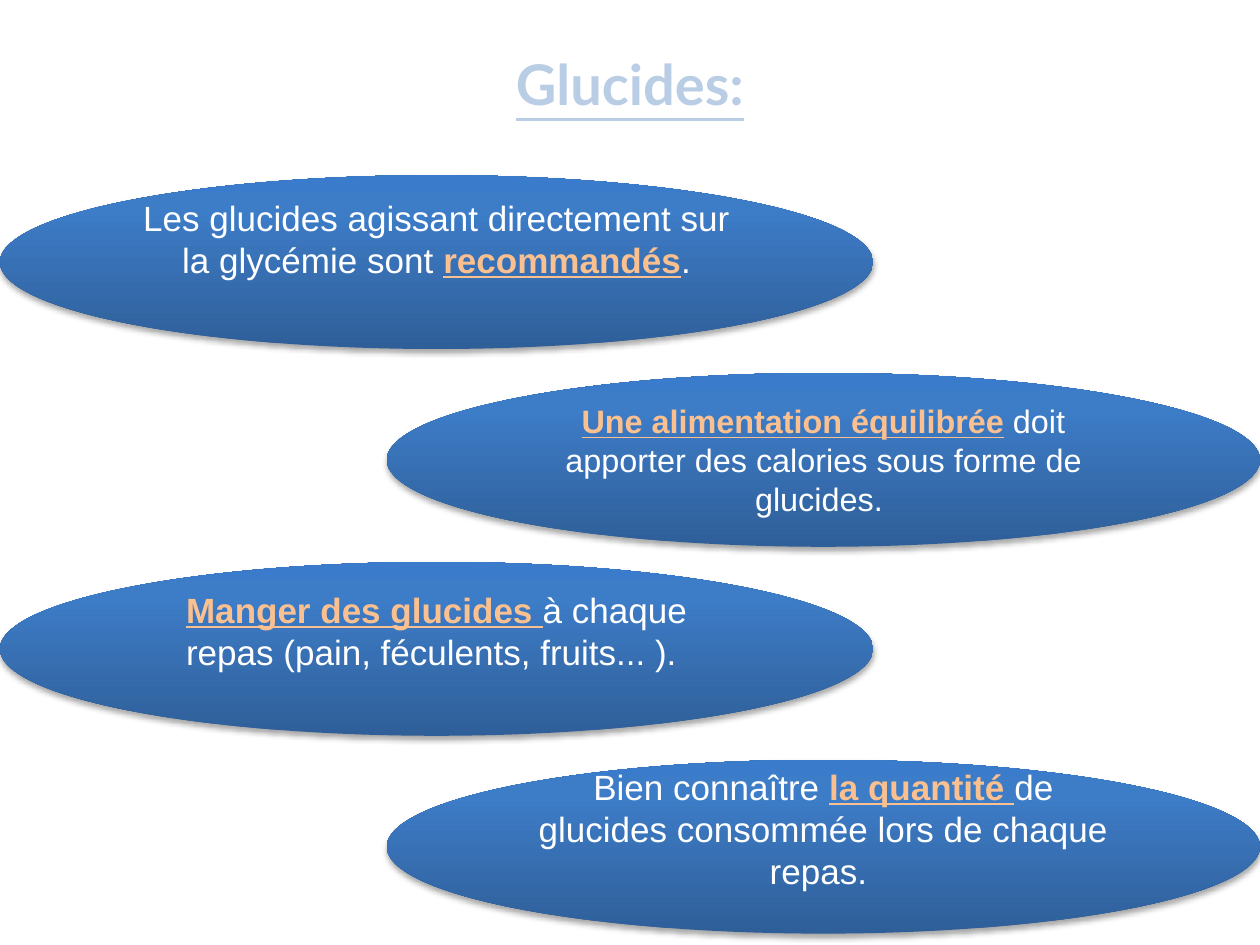
import copy

import pptx
import pptx.dml.color
import pptx.enum.shapes
import pptx.enum.text
import pptx.oxml
import pptx.oxml.ns
import pptx.util
from pptx.util import Inches

WHITE, PEACH, PALE = "FFFFFF", "FAC090", "B9CDE5"
STOPS = [(0, "2F5F99"), (0.8, "3D7CC7"), (1, "3A7CCB")]
SHADOW = (
    '<a:outerShdw %s blurRad="39370" dist="22860" dir="5400000" rotWithShape="0">'
    '<a:srgbClr val="000000"><a:alpha val="35000"/></a:srgbClr></a:outerShdw>'
    % pptx.oxml.ns.nsdecls("a")
)


def color(code):
    return pptx.dml.color.RGBColor.from_string(code)


def write(para, text, size=20, font="Arial", fill=WHITE, strong=False):
    """Add one run; strong means bold and underlined."""
    run = para.add_run()
    run.text = text
    run.font.size = pptx.util.Pt(size)
    run.font.name = font
    run.font.color.rgb = color(fill)
    run.font.bold = run.font.underline = strong


class Page:
    width, height = 6.93, 1.38

    def __init__(self, slide):
        self.slide = slide

    def title(self, text):
        box = self.slide.shapes.add_textbox(
            Inches(0.5), Inches(0.3), Inches(9), Inches(1.25))
        frame = box.text_frame
        frame.word_wrap = True
        frame.margin_top = Inches(0.09)
        para = frame.paragraphs[0]
        para.alignment = pptx.enum.text.PP_ALIGN.CENTER
        write(para, text, size=32, font="Lato", fill=PALE, strong=True)

    def bubble(self, left, top, parts, size=20, lift=0):
        """Draw an ellipse; parts are (text, strong), lift pads the bottom."""
        oval = self.slide.shapes.add_shape(
            pptx.enum.shapes.MSO_SHAPE.OVAL, Inches(left), Inches(top),
            Inches(self.width), Inches(self.height))
        oval.line.fill.background()
        self.shade(oval)
        oval.shadow.inherit = False
        glow = oval.element.spPr.find(pptx.oxml.ns.qn("a:effectLst"))
        glow.append(pptx.oxml.parse_xml(SHADOW))

        frame = oval.text_frame
        frame.word_wrap = True
        frame.vertical_anchor = pptx.enum.text.MSO_ANCHOR.MIDDLE
        frame.margin_bottom = Inches(0.05 + lift)
        para = frame.paragraphs[0]
        para.alignment = pptx.enum.text.PP_ALIGN.CENTER
        for text, strong in parts:
            write(para, text, size=size, strong=strong,
                  fill=PEACH if strong else WHITE)

    def shade(self, shape):
        """Fill with the three-stop gradient, dark at the bottom."""
        shape.fill.gradient()
        shape.fill.gradient_angle = 90
        stops = next(shape.element.spPr.iter(pptx.oxml.ns.qn("a:gsLst")))
        stops.append(copy.deepcopy(stops[-1]))
        for stop, (place, code) in zip(shape.fill.gradient_stops, STOPS):
            stop.position = place
            stop.color.rgb = color(code)


def main():
    deck = pptx.Presentation()
    deck.slide_width, deck.slide_height = Inches(10), Inches(7.5)
    page = Page(deck.slides.add_slide(deck.slide_layouts[6]))
    near, far = 0, 10 - Page.width

    page.title("Glucides:")
    page.bubble(near, 4.46, [
        ("Manger des glucides ", True),
        ("à chaque repas (pain, féculents, fruits... ). ", False),
    ], lift=0.29)
    page.bubble(far, 6.03, [
        ("Bien connaître ", False),
        ("la quantité ", True),
        ("de glucides consommée lors de chaque repas. ", False),
    ], lift=0.29)
    page.bubble(near, 1.39, [
        ("Les glucides agissant directement sur la glycémie sont ", False),
        ("recommandés", True),
        (".", False),
    ], lift=0.38)
    page.bubble(far, 2.96, [
        ("Une alimentation équilibrée", True),
        (" doit apporter des calories sous forme de glucides. ", False),
    ], size=18.5)
    deck.save("out.pptx")


if __name__ == "__main__":
    main()
